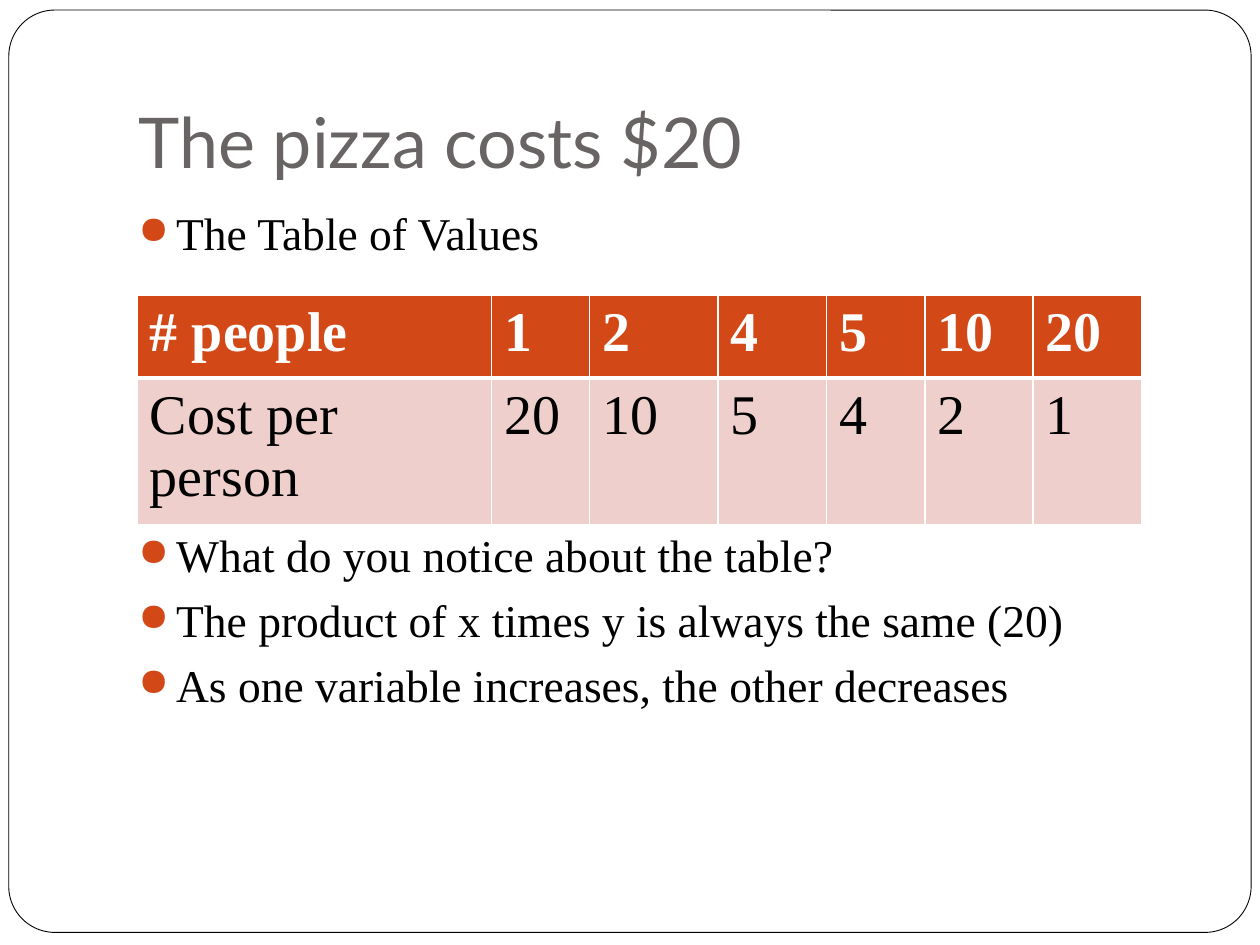
from typing import NamedTuple

from lxml.etree import SubElement
from pptx import Presentation
from pptx.dml.color import RGBColor
from pptx.enum.shapes import MSO_SHAPE
from pptx.enum.text import MSO_ANCHOR
from pptx.oxml.ns import qn
from pptx.util import Inches, Pt

WHITE = RGBColor(0xFF, 0xFF, 0xFF)
BLACK = RGBColor(0, 0, 0)
GREY = RGBColor(0x69, 0x64, 0x64)
ORANGE = RGBColor(0xD3, 0x48, 0x17)
PINK = RGBColor(0xEF, 0xCF, 0xCC)
SERIF = "Times New Roman"


class Bullet(NamedTuple):
    text: str
    space_before: float = 5.8


class TableRow(NamedTuple):
    texts: list
    fill: RGBColor
    color: RGBColor
    bold: bool
    borders: dict


BULLETS = [
    Bullet("The Table of Values"),
    Bullet("What do you notice about the table?", 152.8),  # clears the table
    Bullet("The product of x times y is always the same (20)"),
    Bullet("As one variable increases, the other decreases"),
]
COLUMN_WIDTHS = [2.81, 0.78, 1.02, 0.86, 0.78, 0.86, 0.86]
ROW_HEIGHT = 0.66
PEOPLE = [1, 2, 4, 5, 10, 20]
PIZZA_COST = 20
ROWS = [
    TableRow(["# people", *PEOPLE], ORANGE, WHITE, True,
             {"lnL": 1, "lnR": 1, "lnT": 1, "lnB": 3}),
    TableRow(["Cost per person", *(PIZZA_COST // count for count in PEOPLE)],
             PINK, BLACK, False, {"lnL": 1, "lnR": 1, "lnT": 3, "lnB": 1}),
]


def add_span(para, text: str, color: RGBColor, **formats) -> None:
    span = para.add_run()
    span.text = text
    span.font.color.rgb = color
    for name, value in formats.items():
        setattr(span.font, name, value)


def add_text_box(page, left: float, top: float, width: float, height: float, **formats):
    box = page.shapes.add_textbox(Inches(left), Inches(top), Inches(width), Inches(height))
    frame = box.text_frame
    for name, value in {"word_wrap": True, **formats}.items():
        setattr(frame, name, value)
    return frame


def add_bullet(para, bullet: Bullet) -> None:
    para.line_spacing = Pt(31.2)
    para.space_before = Pt(bullet.space_before)
    properties = para._p.get_or_add_pPr()
    properties.set("marL", str(Inches(0.3)))
    properties.set("indent", str(-Inches(0.3)))
    color = SubElement(properties, qn("a:buClr"))
    SubElement(color, qn("a:srgbClr"), val=str(ORANGE))
    SubElement(properties, qn("a:buSzPct"), val="85000")
    SubElement(properties, qn("a:buChar"), char="●")
    add_span(para, bullet.text, BLACK, name=SERIF, size=Pt(26))


def fill_cell(cell, text: str, row: TableRow) -> None:
    properties = cell._tc.get_or_add_tcPr()
    for side, width in row.borders.items():
        border = SubElement(properties, qn(f"a:{side}"), w=str(Pt(width)))
        solid = SubElement(border, qn("a:solidFill"))
        SubElement(solid, qn("a:srgbClr"), val=str(WHITE))
    cell.fill.solid()
    cell.fill.fore_color.rgb = row.fill
    add_span(cell.text_frame.paragraphs[0], text, row.color,
             name=SERIF, size=Pt(32), bold=row.bold)


def add_value_table(page) -> None:
    table = page.shapes.add_table(
        len(ROWS), len(COLUMN_WIDTHS), Inches(1.09), Inches(2.34),
        Inches(sum(COLUMN_WIDTHS)), Inches(ROW_HEIGHT * len(ROWS))).table
    for column, width in zip(table.columns, COLUMN_WIDTHS):
        column.width = Inches(width)
    for table_row, row in zip(table.rows, ROWS):
        table_row.height = Inches(ROW_HEIGHT)
        for cell, text in zip(table_row.cells, row.texts):
            fill_cell(cell, str(text), row)


def add_page_frame(page) -> None:
    frame = page.shapes.add_shape(MSO_SHAPE.ROUNDED_RECTANGLE, Inches(0.07),
                                  Inches(0.08), Inches(9.86), Inches(7.32))
    frame.adjustments[0] = 0.05
    frame.shadow.inherit = False
    frame.fill.solid()
    frame.fill.fore_color.rgb = WHITE
    frame.line.color.rgb = BLACK
    frame.line.width = Pt(0.5)


def main() -> None:
    deck = Presentation()
    deck.slide_width, deck.slide_height = Inches(10), Inches(7.5)
    page = deck.slides.add_slide(deck.slide_layouts[6])

    add_page_frame(page)

    # Title
    title = add_text_box(page, 1, 0.3, 8.5, 1.25, vertical_anchor=MSO_ANCHOR.BOTTOM,
                         margin_bottom=Inches(0.1))
    add_span(title.paragraphs[0], "The pizza costs $20", GREY, name="Lato", size=Pt(40))

    # Bullets above and below the table
    body = add_text_box(page, 1, 1.58, 8.5, 5)
    for index, bullet in enumerate(BULLETS):
        add_bullet(body.add_paragraph() if index else body.paragraphs[0], bullet)

    add_value_table(page)
    deck.save("out.pptx")


if __name__ == "__main__":
    main()
